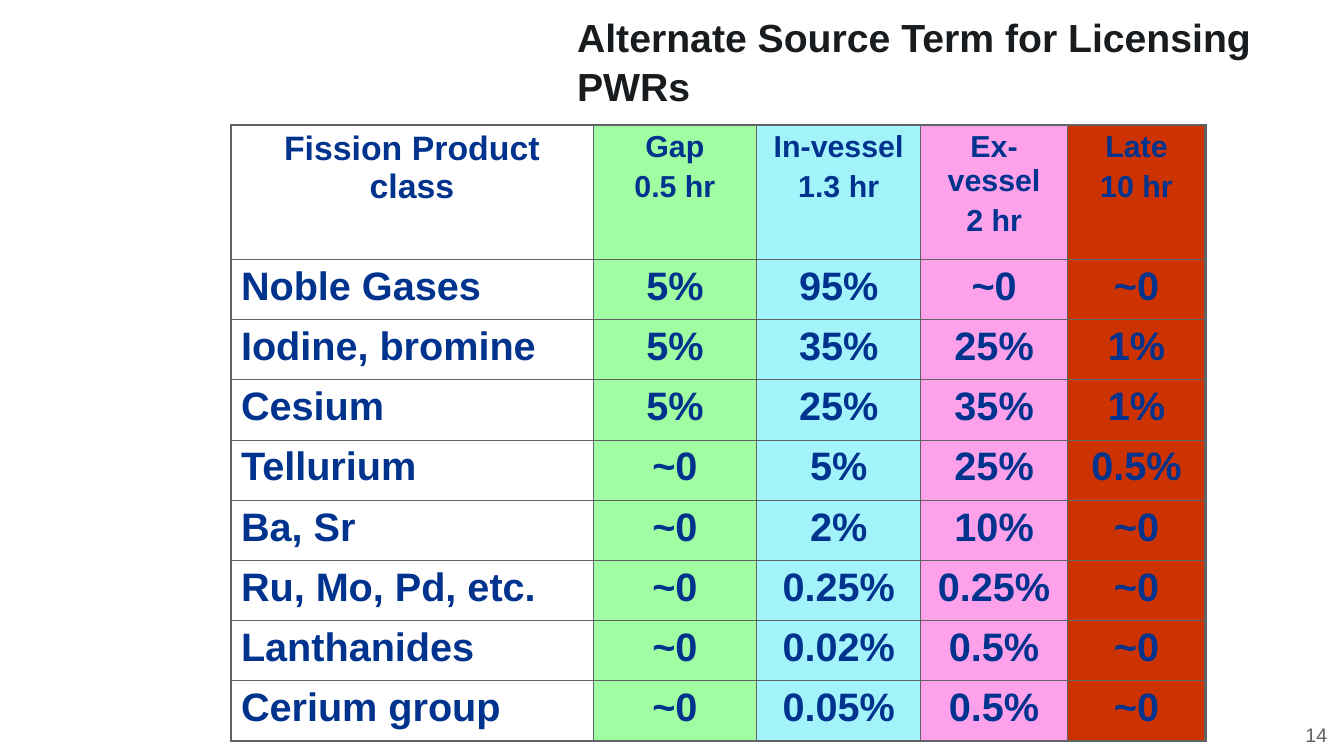
from dataclasses import dataclass

from lxml import etree
from pptx import Presentation
from pptx.dml.color import RGBColor
from pptx.enum.text import MSO_ANCHOR, PP_ALIGN
from pptx.oxml.ns import qn
from pptx.util import Inches, Pt

LEFT, CENTER, RIGHT = PP_ALIGN.LEFT, PP_ALIGN.CENTER, PP_ALIGN.RIGHT
MIDDLE, TOP = MSO_ANCHOR.MIDDLE, MSO_ANCHOR.TOP
TITLE_ONLY_LAYOUT = 5


@dataclass(frozen=True)
class Theme:
    font: str = "Arial"
    title_color: str = "191C1F"
    table_color: str = "00338E"
    grey: str = "616265"
    # One fill per column; None leaves the column unfilled
    column_fills: tuple = (None, "A1FDA1", "A3F3FB", "FDA1EB", "CC3300")
    title_size: float = 33.6
    class_header_size: float = 29
    phase_header_size: float = 26
    body_size: float = 34
    number_size: float = 16.8
    outer_border: float = 2.25
    inner_border: float = 1


class SlideBuilder:
    def __init__(self, slide, theme):
        self.slide = slide
        self.theme = theme

    def set_text(self, text_frame, text, size, color, bold=True, align=LEFT):
        text_frame.text = text
        for index, paragraph in enumerate(text_frame.paragraphs):
            paragraph.alignment = align
            if index:
                paragraph.space_before = Pt(size * 0.2)
            for run in paragraph.runs:
                run.font.name = self.theme.font
                run.font.size = Pt(size)
                run.font.bold = bold
                run.font.color.rgb = RGBColor.from_string(color)

    def title(self, text, left, top, width, height):
        shape = self.slide.shapes.title
        shape.left, shape.top = Inches(left), Inches(top)
        shape.width, shape.height = Inches(width), Inches(height)
        frame = shape.text_frame
        frame.word_wrap = True
        frame.vertical_anchor = MIDDLE
        self.set_text(frame, text, self.theme.title_size, self.theme.title_color)
        frame.paragraphs[0].line_spacing = 1.04

    def slide_number(self, text, left, top, width, height):
        shape = self.slide.shapes.add_textbox(
            Inches(left), Inches(top), Inches(width), Inches(height))
        frame = shape.text_frame
        frame.word_wrap = True
        frame.vertical_anchor = MIDDLE
        frame.margin_left = frame.margin_right = 0
        frame.margin_top = frame.margin_bottom = 0
        self.set_text(frame, text, self.theme.number_size, self.theme.grey, False, RIGHT)

    def borders(self, cell, outer_sides):
        properties = cell._tc.get_or_add_tcPr()
        for index, side in enumerate("LRTB"):
            width = self.theme.outer_border if side in outer_sides else self.theme.inner_border
            line = etree.Element(qn(f"a:ln{side}"), w=str(Pt(width)))
            fill = etree.SubElement(line, qn("a:solidFill"))
            etree.SubElement(fill, qn("a:srgbClr"), val=self.theme.grey)
            properties.insert(index, line)

    def cell(self, cell, text, size, align, fill, outer_sides):
        cell.margin_left = cell.margin_right = Inches(0.12)
        cell.margin_top = cell.margin_bottom = Inches(0.06)
        cell.vertical_anchor = TOP
        self.set_text(cell.text_frame, text, size, self.theme.table_color, align=align)
        if fill:
            cell.fill.solid()
            cell.fill.fore_color.rgb = RGBColor.from_string(fill)
        else:
            cell.fill.background()
        self.borders(cell, outer_sides)

    def table(self, rows, left, top, column_widths, row_heights):
        theme = self.theme
        table = self.slide.shapes.add_table(
            len(rows), len(column_widths), Inches(left), Inches(top),
            Inches(sum(column_widths)), Inches(sum(row_heights))).table
        table.first_row = table.horz_banding = False
        for column, width in zip(table.columns, column_widths):
            column.width = Inches(width)
        last_row, last_column = len(rows) - 1, len(column_widths) - 1
        for r, values in enumerate(rows):
            table.rows[r].height = Inches(row_heights[r])
            for c, text in enumerate(values):
                if r:
                    size = theme.body_size
                else:
                    size = theme.phase_header_size if c else theme.class_header_size
                edges = {"L": c == 0, "R": c == last_column, "T": r == 0, "B": r == last_row}
                outer_sides = [side for side, is_outer in edges.items() if is_outer]
                align = LEFT if r and not c else CENTER
                self.cell(table.cell(r, c), text, size, align,
                          theme.column_fills[c], outer_sides)


RELEASE_FRACTIONS = [
    ("Fission Product class", "Gap\n0.5 hr", "In-vessel\n1.3 hr", "Ex-vessel\n2 hr", "Late\n10 hr"),
    ("Noble Gases", "5%", "95%", "~0", "~0"),
    ("Iodine, bromine", "5%", "35%", "25%", "1%"),
    ("Cesium", "5%", "25%", "35%", "1%"),
    ("Tellurium", "~0", "5%", "25%", "0.5%"),
    ("Ba, Sr", "~0", "2%", "10%", "~0"),
    ("Ru, Mo, Pd, etc.", "~0", "0.25%", "0.25%", "~0"),
    ("Lanthanides", "~0", "0.02%", "0.5%", "~0"),
    ("Cerium group", "~0", "0.05%", "0.5%", "~0"),
]


def main():
    presentation = Presentation()
    presentation.slide_width, presentation.slide_height = Inches(16), Inches(9)
    slide = presentation.slides.add_slide(presentation.slide_layouts[TITLE_ONLY_LAYOUT])
    builder = SlideBuilder(slide, Theme())

    # Title and slide number
    builder.title("Alternate Source Term for Licensing PWRs", 6.77, 0.1, 9.15, 1.23)
    builder.slide_number("14", 15.3, 8.5, 0.5, 0.5)

    # Release fractions by phase: header row, then equal rows
    table_height, header_height = 7.33, 1.6
    body_count = len(RELEASE_FRACTIONS) - 1
    body_height = (table_height - header_height) / body_count
    builder.table(RELEASE_FRACTIONS, 2.75, 1.49, [4.31, 1.95, 1.95, 1.75, 1.64],
                  [header_height] + [body_height] * body_count)

    presentation.save("out.pptx")


if __name__ == "__main__":
    main()
